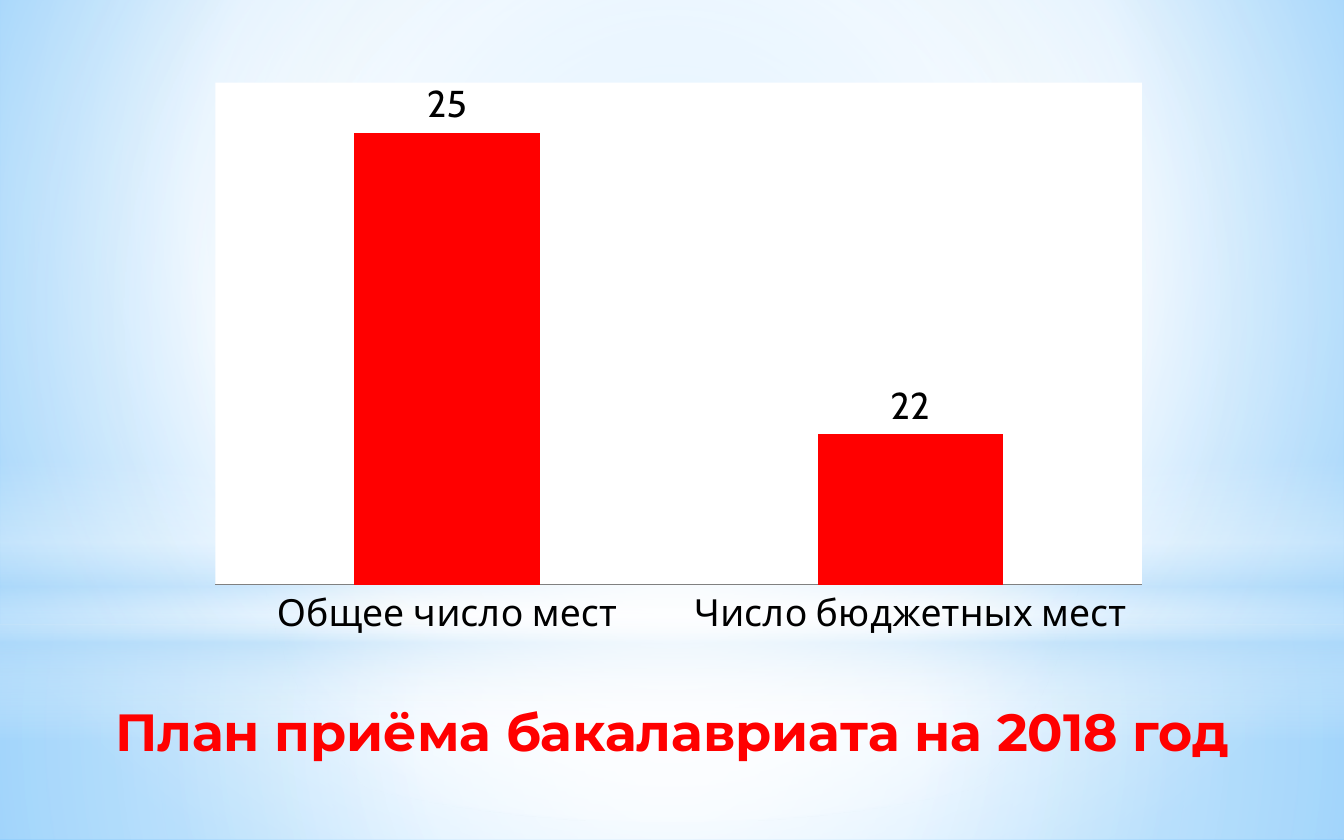
from lxml import etree
from pptx import Presentation
from pptx.chart.data import CategoryChartData
from pptx.dml.color import RGBColor
from pptx.enum.chart import XL_CHART_TYPE, XL_LABEL_POSITION, XL_TICK_MARK
from pptx.enum.shapes import MSO_SHAPE
from pptx.enum.text import MSO_ANCHOR, MSO_AUTO_SIZE, PP_ALIGN
from pptx.oxml.ns import qn
from pptx.util import Inches, Pt

RECT, OVAL = MSO_SHAPE.RECTANGLE, MSO_SHAPE.OVAL
COLUMNS = XL_CHART_TYPE.COLUMN_CLUSTERED
LABEL_ABOVE = XL_LABEL_POSITION.OUTSIDE_END
NO_TICKS = XL_TICK_MARK.NONE

COLORS = {"white": "FFFFFF", "sky": "9ED5FF", "blue": "5BB9FF", "pale": "B4DCFA",
          "red": "FF0000", "black": "000000", "axis": "808080"}

TITLE = "План приёма бакалавриата на 2018 год"
TITLE_BOX = (0, 5.15, 10, 0.57)
PLACES = {"Общее число мест": 25, "Число бюджетных мест": 22}
CHART_BOX = (1.46, 0.53, 7.18, 4.29)
VALUE_RANGE = (20.5, 25.5)

# Gradient stops: position %, colour, opacity %
CENTER = (50, 50, 50, 50)
BACKGROUND_STOPS = [(0, "sky", 100), (60, "white", 100), (100, "blue", 100)]
BACKGROUND_FOCUS = (20, 10, 20, 60)
# Shape, box, stops, focus rectangle (None for a vertical gradient)
GLOWS = [
    (RECT, (0, 4.65, 10, 1.6),
     [(0, "white", 91), (37, "white", 76), (100, "pale", 79)], CENTER),
    (RECT, (0, 0, 10, 4.65),
     [(0, "white", 89), (48, "white", 62), (100, "pale", 79)], CENTER),
    (RECT, (0, 3.43, 10, 2.08),
     [(0, "white", 0), (29, "white", 30), (45, "pale", 40),
      (55, "white", 26), (65, "pale", 60), (100, "white", 0)], None),
    (OVAL, (0, 1.46, 10, 4.65), [(0, "white", 100), (56, "white", 0)], CENTER),
]


def rgb(name):
    return RGBColor.from_string(COLORS[name])


def inches(box):
    return [Inches(length) for length in box]


def set_gradient(fill, owner, stops, focus):
    """Fill with stops around a focus rectangle, or downwards without one."""
    fill.gradient()
    gradient = owner.xpath(".//a:gradFill")[0]
    for child in list(gradient):
        gradient.remove(child)
    stop_list = etree.SubElement(gradient, qn("a:gsLst"))
    for position, color, opacity in stops:
        stop = etree.SubElement(stop_list, qn("a:gs"), pos=str(position * 1000))
        shade = etree.SubElement(stop, qn("a:srgbClr"), val=COLORS[color])
        if opacity < 100:
            etree.SubElement(shade, qn("a:alpha"), val=str(opacity * 1000))
    if focus:
        route = etree.SubElement(gradient, qn("a:path"), path="circle")
        sides = {side: str(share * 1000) for side, share in zip("ltrb", focus)}
        etree.SubElement(route, qn("a:fillToRect"), **sides)
    else:
        etree.SubElement(gradient, qn("a:lin"), ang="5400000", scaled="0")


def set_font(font, color, **formats):
    font.color.rgb = rgb(color)
    for name, value in formats.items():
        setattr(font, name, value)


def add_glows(page):
    for kind, box, stops, focus in GLOWS:
        glow = page.shapes.add_shape(kind, *inches(box))
        glow.shadow.inherit = False
        glow.line.fill.background()
        set_gradient(glow.fill, glow.element, stops, focus)


def format_title(page):
    title = page.shapes.title
    page.shapes.element.append(title.element)  # in front of the glows
    title.left, title.top, title.width, title.height = inches(TITLE_BOX)
    frame = title.text_frame
    frame.text = TITLE
    frame.word_wrap = True
    frame.auto_size = MSO_AUTO_SIZE.SHAPE_TO_FIT_TEXT
    frame.vertical_anchor = MSO_ANCHOR.MIDDLE
    para = frame.paragraphs[0]
    para.alignment = PP_ALIGN.CENTER
    set_font(para.runs[0].font, "red", name="Montserrat", size=Pt(28), bold=True)


def add_places_chart(page):
    data = CategoryChartData()
    data.categories = list(PLACES)
    data.add_series("Series 1", list(PLACES.values()))
    chart = page.shapes.add_chart(COLUMNS, *inches(CHART_BOX), data).chart
    chart.has_legend = False
    chart.has_title = False
    set_font(chart.font, "black", name="Cabin", size=Pt(10))

    values = chart.value_axis
    values.minimum_scale, values.maximum_scale = VALUE_RANGE
    values.has_major_gridlines = False
    values.visible = False
    categories = chart.category_axis
    categories.major_tick_mark = NO_TICKS
    categories.format.line.color.rgb = rgb("axis")
    categories.format.line.width = Pt(0.75)
    set_font(categories.tick_labels.font, "black", name="Cabin", size=Pt(20))

    plot = chart.plots[0]
    plot.vary_by_categories = False
    plot.gap_width, plot.overlap = 150, -25
    bars = plot.series[0].format
    bars.fill.solid()
    bars.fill.fore_color.rgb = rgb("red")
    plot.has_data_labels = True
    labels = plot.data_labels
    labels.show_value = True
    labels.position = LABEL_ABOVE
    set_font(labels.font, "black", name="Cabin", size=Pt(20))

    plot_area = chart.element.xpath(".//c:plotArea")[0]
    properties = etree.SubElement(plot_area, qn("c:spPr"))
    solid = etree.SubElement(properties, qn("a:solidFill"))
    etree.SubElement(solid, qn("a:srgbClr"), val=COLORS["white"])


def main():
    deck = Presentation()
    deck.slide_width, deck.slide_height = Inches(10), Inches(6.25)
    page = deck.slides.add_slide(deck.slide_layouts[5])
    set_gradient(page.background.fill, page.element, BACKGROUND_STOPS, BACKGROUND_FOCUS)
    add_glows(page)
    format_title(page)
    add_places_chart(page)
    deck.save("out.pptx")


if __name__ == "__main__":
    main()
